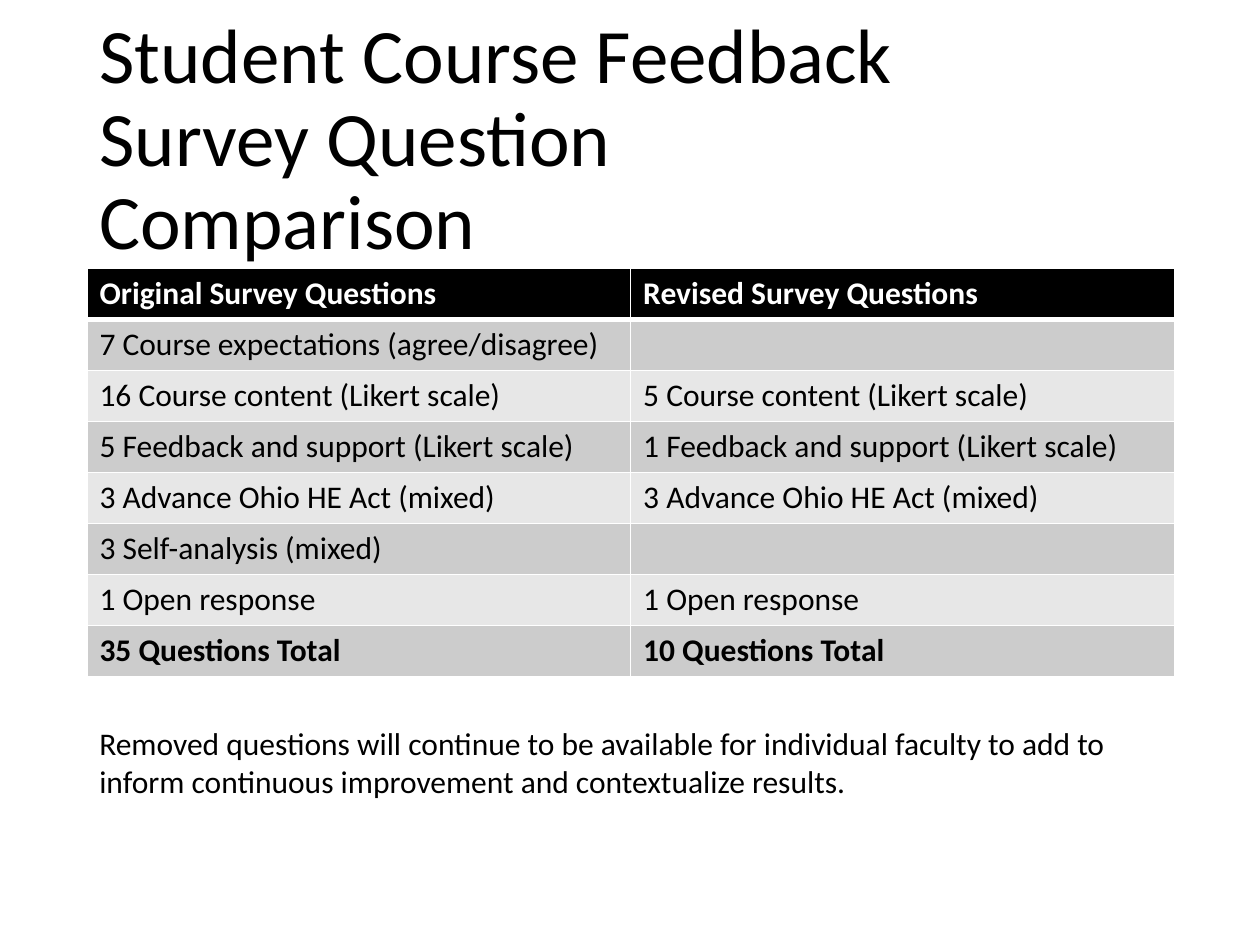
import dataclasses

import lxml.etree
import pptx
import pptx.dml.color
import pptx.enum.text
import pptx.oxml.ns
import pptx.util


@dataclasses.dataclass(frozen=True)
class Theme:
    font: str = "Calibri"
    title_size: int = 44
    body_size: int = 18
    ink: str = "000000"
    paper: str = "FFFFFF"
    bands: tuple = ("CCCCCC", "E7E7E7")
    thin_rule: int = 1
    header_rule: int = 3


def rgb(value):
    return pptx.dml.color.RGBColor.from_string(value)


class SlideBuilder:
    def __init__(self, presentation, theme):
        self.theme = theme
        self.width = presentation.slide_width
        self.height = presentation.slide_height
        self.slide = presentation.slides.add_slide(presentation.slide_layouts[6])

    def area(self, left, top, width, height):
        return (
            int(left * self.width),
            int(top * self.height),
            int(width * self.width),
            int(height * self.height),
        )

    def style(self, paragraph, size, color, bold=False):
        font = paragraph.font
        font.name = self.theme.font
        font.size = pptx.util.Pt(size)
        font.bold = bold
        font.color.rgb = rgb(color)

    def text(self, words, area, size, anchor=pptx.enum.text.MSO_ANCHOR.TOP, spacing=None):
        frame = self.slide.shapes.add_textbox(*self.area(*area)).text_frame
        frame.word_wrap = True
        frame.vertical_anchor = anchor
        paragraph = frame.paragraphs[0]
        paragraph.text = words
        paragraph.line_spacing = spacing
        self.style(paragraph, size, self.theme.ink)

    def border(self, cell, side, points):
        properties = cell._tc.get_or_add_tcPr()
        line = lxml.etree.SubElement(
            properties, pptx.oxml.ns.qn(f"a:{side}"), w=str(pptx.util.Pt(points))
        )
        fill = lxml.etree.SubElement(line, pptx.oxml.ns.qn("a:solidFill"))
        lxml.etree.SubElement(fill, pptx.oxml.ns.qn("a:srgbClr"), val=self.theme.paper)

    def table(self, rows, area):
        theme = self.theme
        table = self.slide.shapes.add_table(len(rows), len(rows[0]), *self.area(*area)).table
        for row, entries in enumerate(rows):
            is_header = row == 0
            is_total = row == len(rows) - 1
            fill = theme.ink if is_header else theme.bands[(row - 1) % 2]
            color = theme.paper if is_header else theme.ink
            rules = {
                "lnL": theme.thin_rule,
                "lnR": theme.thin_rule,
                "lnT": theme.header_rule if row == 1 else theme.thin_rule,
                "lnB": theme.header_rule if is_header else theme.thin_rule,
            }
            for column, entry in enumerate(entries):
                cell = table.cell(row, column)
                for side, points in rules.items():
                    self.border(cell, side, points)
                cell.fill.solid()
                cell.fill.fore_color.rgb = rgb(fill)
                cell.text = entry
                paragraph = cell.text_frame.paragraphs[0]
                self.style(paragraph, theme.body_size, color, is_header or is_total)


SURVEY_COMPARISON = [
    ("Original Survey Questions", "Revised Survey Questions"),
    ("7 Course expectations (agree/disagree)", ""),
    ("16 Course content (Likert scale)", "5 Course content (Likert scale)"),
    ("5 Feedback and support (Likert scale)", "1 Feedback and support (Likert scale)"),
    ("3 Advance Ohio HE Act (mixed)", "3 Advance Ohio HE Act (mixed)"),
    ("3 Self-analysis (mixed)", ""),
    ("1 Open response", "1 Open response"),
    ("35 Questions Total", "10 Questions Total"),
]
LEFT = 0.069
CONTENT_WIDTH = 0.863


def main():
    presentation = pptx.Presentation()
    presentation.slide_width = pptx.util.Inches(10)
    presentation.slide_height = pptx.util.Inches(7.5)
    theme = Theme()
    builder = SlideBuilder(presentation, theme)
    builder.text(
        "Student Course Feedback Survey Question Comparison",
        (LEFT, 0.053, 0.738, 0.193),
        theme.title_size,
        pptx.enum.text.MSO_ANCHOR.MIDDLE,
        0.9,
    )
    builder.table(SURVEY_COMPARISON, (LEFT, 0.284, CONTENT_WIDTH, 0.432))
    builder.text(
        "Removed questions will continue to be available for individual faculty "
        "to add to inform continuous improvement and contextualize results.",
        (LEFT, 0.76, CONTENT_WIDTH, 0.095),
        theme.body_size,
    )
    presentation.save("out.pptx")


if __name__ == "__main__":
    main()
